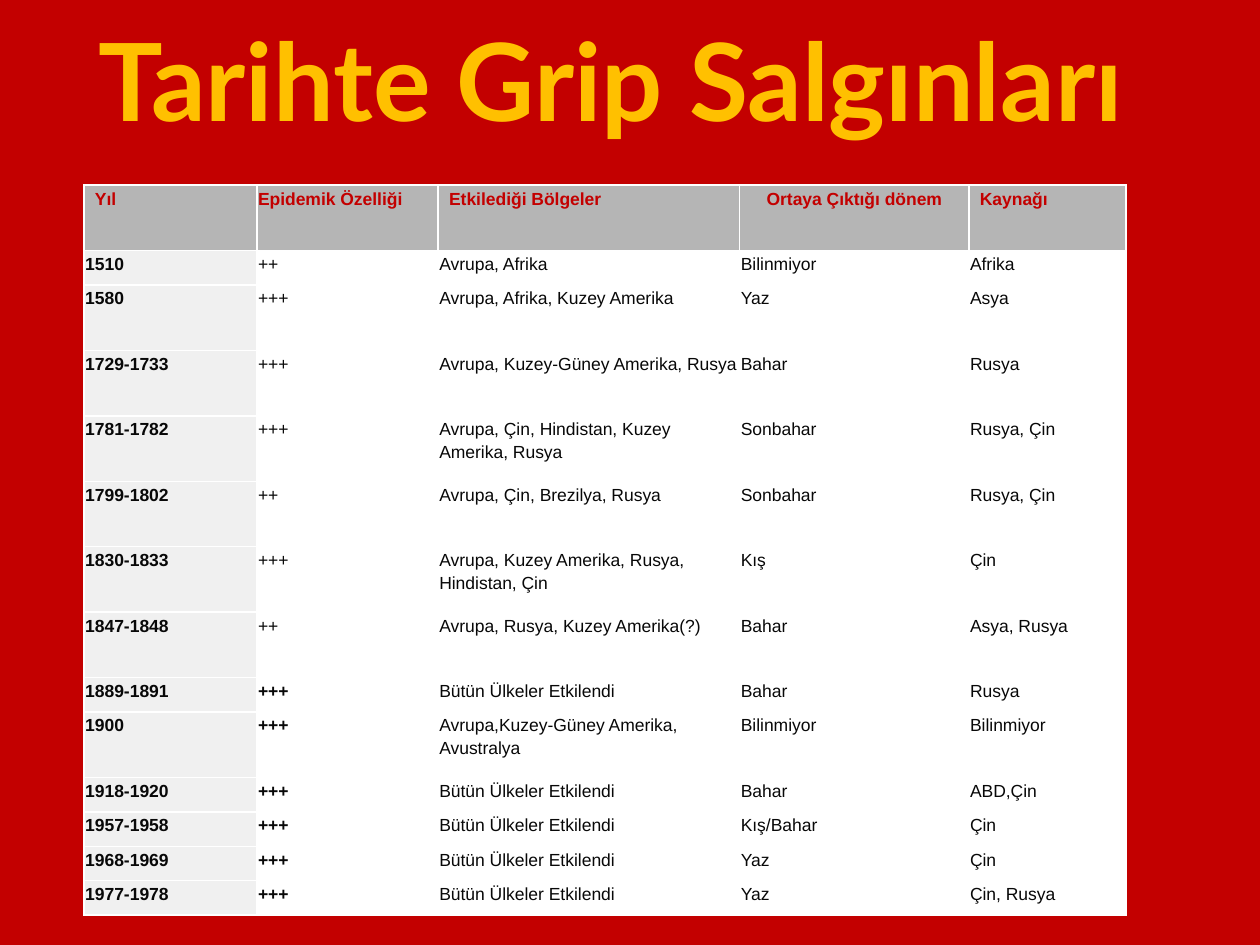
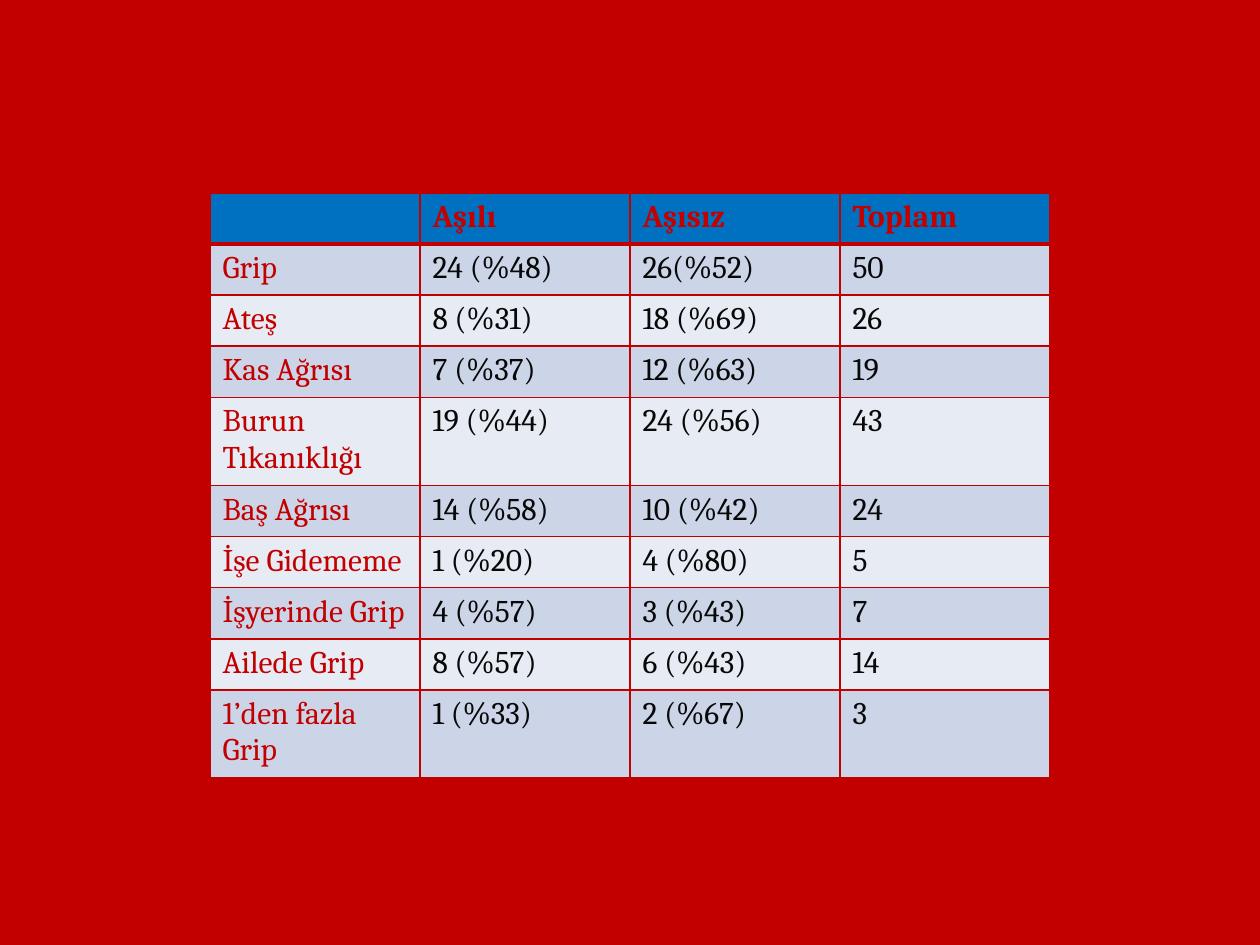
from dataclasses import dataclass

from lxml.etree import SubElement
from pptx import Presentation
from pptx.dml.color import RGBColor
from pptx.enum.text import MSO_ANCHOR, PP_ALIGN
from pptx.oxml.ns import qn
from pptx.util import Pt

TITLE = "Tarihte Grip Salgınları"

EPIDEMIC_HEADER = ("Yıl", "Epidemik Özelliği", "Etkilediği Bölgeler",
                   "Ortaya Çıktığı dönem", "Kaynağı")
EPIDEMICS = [
    ("1510", "++", "Avrupa, Afrika", "Bilinmiyor", "Afrika"),
    ("1580", "+++", "Avrupa, Afrika, Kuzey Amerika", "Yaz", "Asya"),
    ("1729-1733", "+++", "Avrupa, Kuzey-Güney Amerika, Rusya", "Bahar", "Rusya"),
    ("1781-1782", "+++", "Avrupa, Çin, Hindistan, Kuzey Amerika, Rusya", "Sonbahar", "Rusya, Çin"),
    ("1799-1802", "++", "Avrupa, Çin, Brezilya, Rusya", "Sonbahar", "Rusya, Çin"),
    ("1830-1833", "+++", "Avrupa, Kuzey Amerika, Rusya, Hindistan, Çin", "Kış", "Çin"),
    ("1847-1848", "++", "Avrupa, Rusya, Kuzey Amerika(?)", "Bahar", "Asya, Rusya"),
    ("1889-1891", "+++", "Bütün Ülkeler Etkilendi", "Bahar", "Rusya"),
    ("1900", "+++", "Avrupa,Kuzey-Güney Amerika, Avustralya", "Bilinmiyor", "Bilinmiyor"),
    ("1918-1920", "+++", "Bütün Ülkeler Etkilendi", "Bahar", "ABD,Çin"),
    ("1957-1958", "+++", "Bütün Ülkeler Etkilendi", "Kış/Bahar", "Çin"),
    ("1968-1969", "+++", "Bütün Ülkeler Etkilendi", "Yaz", "Çin"),
    ("1977-1978", "+++", "Bütün Ülkeler Etkilendi", "Yaz", "Çin, Rusya"),
]
SHORT_EPIDEMIC_ROWS = {1, 8, 10, 11, 12, 13}
FIRST_BOLD_SEVERITY_ROW = 8

VACCINE_HEADER = ("", "Aşılı", "Aşısız", "Toplam")
VACCINE_RESULTS = [
    ("Grip", "24 (%48)", "26(%52)", "50"),
    ("Ateş", "8 (%31)", "18 (%69)", "26"),
    ("Kas Ağrısı", "7 (%37)", "12 (%63)", "19"),
    ("Burun Tıkanıklığı", "19 (%44)", "24 (%56)", "43"),
    ("Baş Ağrısı", "14 (%58)", "10 (%42)", "24"),
    ("İşe Gidememe", "1 (%20)", "4 (%80)", "5"),
    ("İşyerinde Grip", "4 (%57)", "3 (%43)", "7"),
    ("Ailede Grip", "8 (%57)", "6 (%43)", "14"),
    ("1’den fazla Grip", "1 (%33)", "2 (%67)", "3"),
]


@dataclass(frozen=True)
class Theme:
    red: str = "C30000"
    gold: str = "FFC000"
    ink: str = "080808"
    white: str = "FFFFFF"
    header_gray: str = "B5B5B5"
    year_gray: str = "F0F0F0"
    header_blue: str = "0070C0"
    bands: tuple = ("CCD5E8", "E7EBF4")
    title_font: str = "Lato"
    epidemic_font: str = "Arial"
    vaccine_font: str = "Cambria"
    title_size: float = 61.6
    epidemic_size: float = 10
    vaccine_size: float = 18


THEME = Theme()


def style(paragraph, name, size, color, bold=False):
    font = paragraph.font
    font.name, font.size, font.bold = name, Pt(size), bold
    font.color.rgb = RGBColor.from_string(color)


def add_red_slide(presentation):
    slide = presentation.slides.add_slide(presentation.slide_layouts[6])
    fill = slide.background.fill
    fill.solid()
    fill.fore_color.rgb = RGBColor.from_string(THEME.red)
    return slide


def add_title(slide, text):
    frame = slide.shapes.add_textbox(Pt(25), Pt(0), Pt(648), Pt(90)).text_frame
    frame.word_wrap = True
    frame.vertical_anchor = MSO_ANCHOR.MIDDLE
    paragraph = frame.paragraphs[0]
    paragraph.text = text
    paragraph.alignment = PP_ALIGN.CENTER
    style(paragraph, THEME.title_font, THEME.title_size, THEME.gold, bold=True)


def add_plain_table(slide, rows, left, top, widths, heights):
    """Add a table without style banding and return it filled with the rows."""
    table = slide.shapes.add_table(len(rows), len(widths), Pt(left), Pt(top),
                                   Pt(sum(widths)), Pt(sum(heights))).table
    table.first_row = table.horz_banding = False
    for column, width in zip(table.columns, widths):
        column.width = Pt(width)
    for row, height, texts in zip(table.rows, heights, rows):
        row.height = Pt(height)
        for cell, text in zip(row.cells, texts):
            cell.text = text
    return table


def each_cell(table):
    for row_index, row in enumerate(table.rows):
        for column_index, cell in enumerate(row.cells):
            yield row_index, column_index, cell, cell.text_frame.paragraphs[0]


def fill_cell(cell, color):
    cell.fill.solid()
    cell.fill.fore_color.rgb = RGBColor.from_string(color)


def add_borders(cell, color, bottom):
    """Draw 1 pt borders, with the bottom one at its own width."""
    properties = cell._tc.get_or_add_tcPr()
    sides = (("a:lnL", 1), ("a:lnR", 1), ("a:lnT", 1), ("a:lnB", bottom))
    for position, (tag, width) in enumerate(sides):
        line = SubElement(properties, qn(tag), w=str(Pt(width)))
        SubElement(SubElement(line, qn("a:solidFill")), qn("a:srgbClr"), val=color)
        properties.insert(position, line)


def build_epidemics(presentation):
    slide = add_red_slide(presentation)
    add_title(slide, TITLE)
    rows = [EPIDEMIC_HEADER, *EPIDEMICS]
    heights = [19.7 if index in SHORT_EPIDEMIC_ROWS else 37.4 for index in range(len(rows))]
    table = add_plain_table(slide, rows, 48, 105.8, (98.8, 103.6, 172.3, 131, 89.8), heights)
    for row, column, cell, paragraph in each_cell(table):
        header = row == 0
        indented = header and column in (0, 2, 4)
        cell.margin_left = Pt(6.3 if indented else 0.7)
        cell.margin_right = cell.margin_top = cell.margin_bottom = Pt(0.7)
        paragraph.line_spacing = 1.15
        if header and column == 3:
            paragraph.alignment = PP_ALIGN.CENTER
            paragraph.space_after = Pt(10)
        bold = header or column == 0 or (column == 1 and row >= FIRST_BOLD_SEVERITY_ROW)
        style(paragraph, THEME.epidemic_font, THEME.epidemic_size,
              THEME.red if header else THEME.ink, bold)
        body_fill = THEME.year_gray if column == 0 else THEME.white
        fill_cell(cell, THEME.header_gray if header else body_fill)


def build_vaccine_results(presentation):
    slide = add_red_slide(presentation)
    rows = [VACCINE_HEADER, *VACCINE_RESULTS]
    table = add_plain_table(slide, rows, 120, 110.2, [120] * 4, [29.2] * len(rows))
    for row, column, cell, paragraph in each_cell(table):
        header = row == 0
        style(paragraph, THEME.vaccine_font, THEME.vaccine_size,
              THEME.red if header or column == 0 else THEME.ink, bold=header)
        fill_cell(cell, THEME.header_blue if header else THEME.bands[(row - 1) % 2])
        add_borders(cell, THEME.red, bottom=3 if header else 1)


def main():
    presentation = Presentation()
    presentation.slide_width, presentation.slide_height = Pt(720), Pt(540)
    build_epidemics(presentation)
    build_vaccine_results(presentation)
    presentation.save("out.pptx")


if __name__ == "__main__":
    main()
